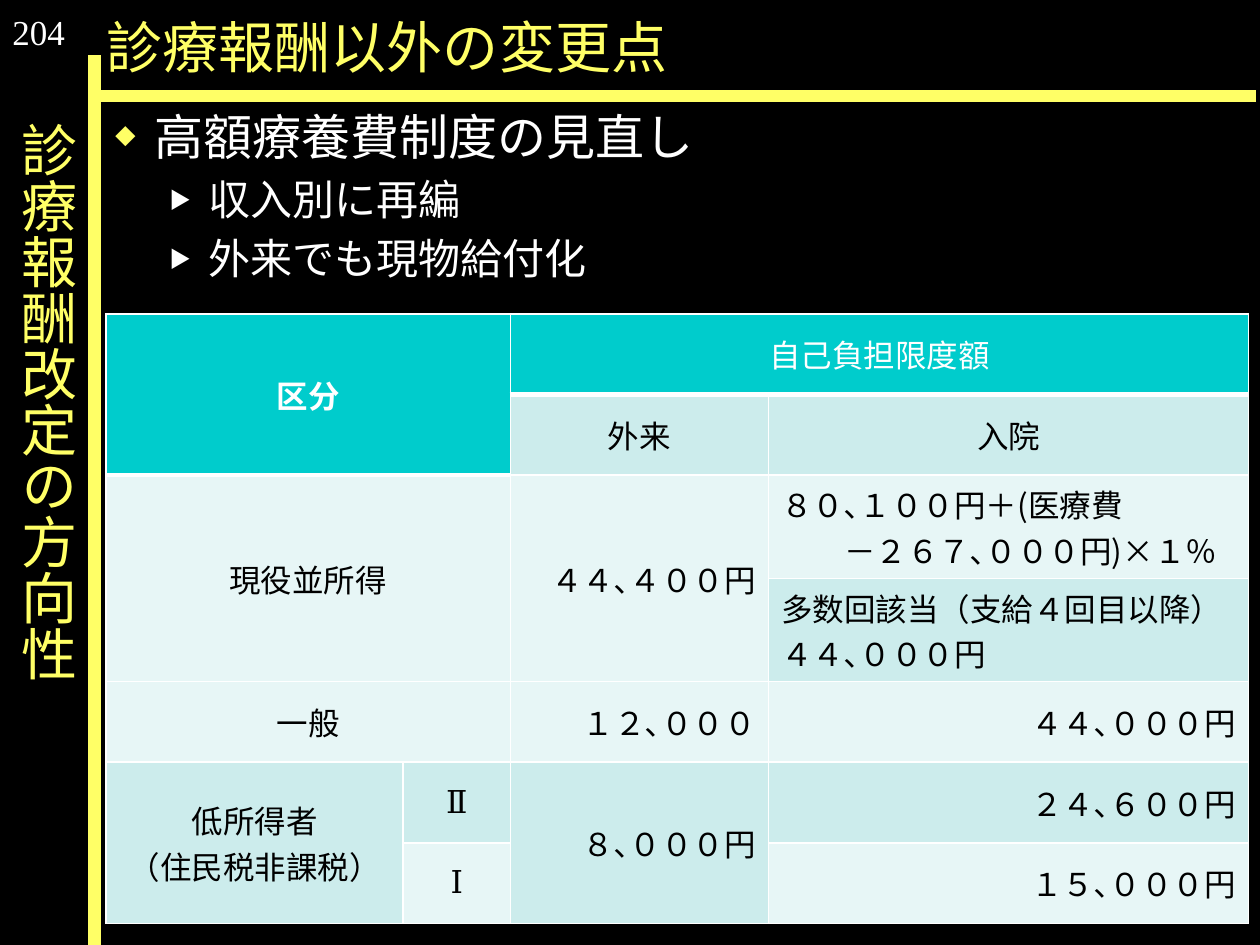
from lxml import etree
from pptx import Presentation
from pptx.dml.color import RGBColor
from pptx.enum.shapes import MSO_CONNECTOR
from pptx.enum.text import MSO_ANCHOR, PP_ALIGN
from pptx.oxml.ns import qn
from pptx.util import Inches, Pt

LEFT, MID, RIGHT = PP_ALIGN.LEFT, PP_ALIGN.CENTER, PP_ALIGN.RIGHT
TOP, CENTER = MSO_ANCHOR.TOP, MSO_ANCHOR.MIDDLE
LINE = MSO_CONNECTOR.STRAIGHT

BLACK = RGBColor(0, 0, 0)
WHITE = RGBColor(255, 255, 255)
YELLOW = RGBColor(255, 255, 102)
TEAL = RGBColor(0, 204, 204)
PALE = RGBColor(0xE7, 0xF6, 0xF6)
MINT = RGBColor(0xCC, 0xEC, 0xEC)
SERIF, SANS = "Times New Roman", "Noto Sans CJK JP"

COLS = [2.36, 0.85, 2.05, 3.81]
ROWS = [0.64, 0.64, 0.82, 0.82, 0.64, 0.64, 0.64]

# row, column, rows spanned, columns spanned, text, fill, align, font
CELLS = [
    (0, 0, 2, 2, "区分", TEAL, MID, SERIF),
    (0, 2, 1, 2, "自己負担限度額", TEAL, MID, SANS),
    (1, 2, 1, 1, "外来", MINT, MID, SERIF),
    (1, 3, 1, 1, "入院", MINT, MID, SERIF),
    (2, 0, 2, 2, "現役並所得", PALE, MID, SERIF),
    (2, 2, 2, 1, "４４､４００円", PALE, RIGHT, SERIF),
    (2, 3, 1, 1, "８０､１００円＋(医療費\n　　－２６７､０００円)×１％", PALE, LEFT, SANS),
    (3, 3, 1, 1, "多数回該当（支給４回目以降）\n４４､０００円", MINT, LEFT, SANS),
    (4, 0, 1, 2, "一般", PALE, MID, SERIF),
    (4, 2, 1, 1, "１２､０００", PALE, RIGHT, SERIF),
    (4, 3, 1, 1, "４４､０００円", PALE, RIGHT, SANS),
    (5, 0, 2, 1, "低所得者\n（住民税非課税）", MINT, MID, SERIF),
    (5, 1, 1, 1, "Ⅱ", MINT, MID, SERIF),
    (5, 2, 2, 1, "８､０００円", MINT, RIGHT, SERIF),
    (5, 3, 1, 1, "２４､６００円", MINT, RIGHT, SANS),
    (6, 1, 1, 1, "Ⅰ", PALE, MID, SERIF),
    (6, 3, 1, 1, "１５､０００円", PALE, RIGHT, SANS),
]


def write(par, text, size=18, font=SERIF, color=WHITE, bold=False, align=LEFT):
    """Fill one paragraph with one formatted run."""
    par.alignment = align
    run = par.add_run()
    run.text = text
    run.font.size = Pt(size)
    run.font.name = font
    run.font.bold = bold
    run.font.color.rgb = color
    # Roman numerals keep the serif face
    east = SERIF if text in "ⅠⅡ" else SANS
    etree.SubElement(run.font._element, qn("a:ea"), typeface=east)


def box(slide, x, y, w, h, anchor=CENTER):
    frame = slide.shapes.add_textbox(*map(Inches, (x, y, w, h))).text_frame
    frame.word_wrap = True
    frame.vertical_anchor = anchor
    return frame


def bullet(par, mark, color, share, left, hang):
    props = par._p.get_or_add_pPr()
    props.set("marL", str(Inches(left)))
    props.set("indent", str(-Inches(hang)))
    tint = etree.SubElement(props, qn("a:buClr"))
    etree.SubElement(tint, qn("a:srgbClr"), val=str(color))
    etree.SubElement(props, qn("a:buSzPct"), val=str(share * 1000))
    etree.SubElement(props, qn("a:buFont"), typeface=SANS)
    etree.SubElement(props, qn("a:buChar"), char=mark)


def rule(slide, *ends):
    line = slide.shapes.add_connector(LINE, *map(Inches, ends))
    line.line.color.rgb = YELLOW
    line.line.width = Pt(7)
    etree.SubElement(line._element.spPr, qn("a:effectLst"))


def border(cell, row, col):
    """White edges, thicker under the header cells."""
    head = 2 if col < 2 else 1
    props = cell._tc.get_or_add_tcPr()
    for side in "LRTB":
        thick = (side == "T" and row == head) or (side == "B" and row == head - 1)
        edge = etree.SubElement(props, qn("a:ln" + side), w=str(Pt(3 if thick else 1)))
        fill = etree.SubElement(edge, qn("a:solidFill"))
        etree.SubElement(fill, qn("a:srgbClr"), val=str(WHITE))


def limits(slide):
    """Table of payment limits by income."""
    size = map(Inches, (0.84, 2.49, sum(COLS), sum(ROWS)))
    table = slide.shapes.add_table(len(ROWS), len(COLS), *size).table
    for col, width in zip(table.columns, COLS):
        col.width = Inches(width)
    for row, height in zip(table.rows, ROWS):
        row.height = Inches(height)
    for r in range(len(ROWS)):
        for c in range(len(COLS)):
            border(table.cell(r, c), r, c)
    for r, c, down, over, text, fill, align, font in CELLS:
        cell = table.cell(r, c)
        if down * over > 1:
            cell.merge(table.cell(r + down - 1, c + over - 1))
        cell.vertical_anchor = CENTER
        cell.fill.solid()
        cell.fill.fore_color.rgb = fill
        frame = cell.text_frame
        for i, part in enumerate(text.split("\n")):
            par = frame.add_paragraph() if i else frame.paragraphs[0]
            write(par, part, font=font, align=align, bold=(r == c == 0),
                  color=WHITE if fill == TEAL else BLACK)


def points(slide):
    """Bulleted list under the title."""
    frame = box(slide, 0.75, 0.76, 9.25, 1.6, TOP)
    items = [("高額療養費制度の見直し", 0), ("収入別に再編", 1), ("外来でも現物給付化", 1)]
    for i, (text, level) in enumerate(items):
        par = frame.add_paragraph() if i else frame.paragraphs[0]
        par.level = level
        par.line_spacing = Pt(29 if level else 36)
        par.space_before = Pt(4.8 if level else 0)
        write(par, text, size=24 if level else 28, font=SANS)
        if level:
            bullet(par, "▶", WHITE, 52, 0.81, 0.31)
        else:
            bullet(par, "◆", YELLOW, 42, 0.38, 0.31)


def main():
    deck = Presentation()
    deck.slide_width, deck.slide_height = Inches(10), Inches(7.5)
    slide = deck.slides.add_slide(deck.slide_layouts[6])
    slide.background.fill.solid()
    slide.background.fill.fore_color.rgb = BLACK

    # Page number, title and list
    write(box(slide, 0, 0, 2.08, 0.5).paragraphs[0], "204", size=20)
    write(box(slide, 0.75, 0.05, 8.5, 0.63).paragraphs[0],
          "診療報酬以外の変更点", size=32, color=YELLOW)
    points(slide)

    # Frame lines
    rule(slide, 0.8, 0.76, 9.97, 0.76)
    rule(slide, 0.75, 0.44, 0.75, 7.5)

    # Vertical side heading
    side = box(slide, -0.04, 0.87, 0.83, 5.96)
    side._txBody.bodyPr.set("vert", "eaVert")
    write(side.paragraphs[0], "診療報酬改定の方向性", size=32, color=YELLOW, align=MID)

    limits(slide)
    deck.save("out.pptx")


if __name__ == "__main__":
    main()
